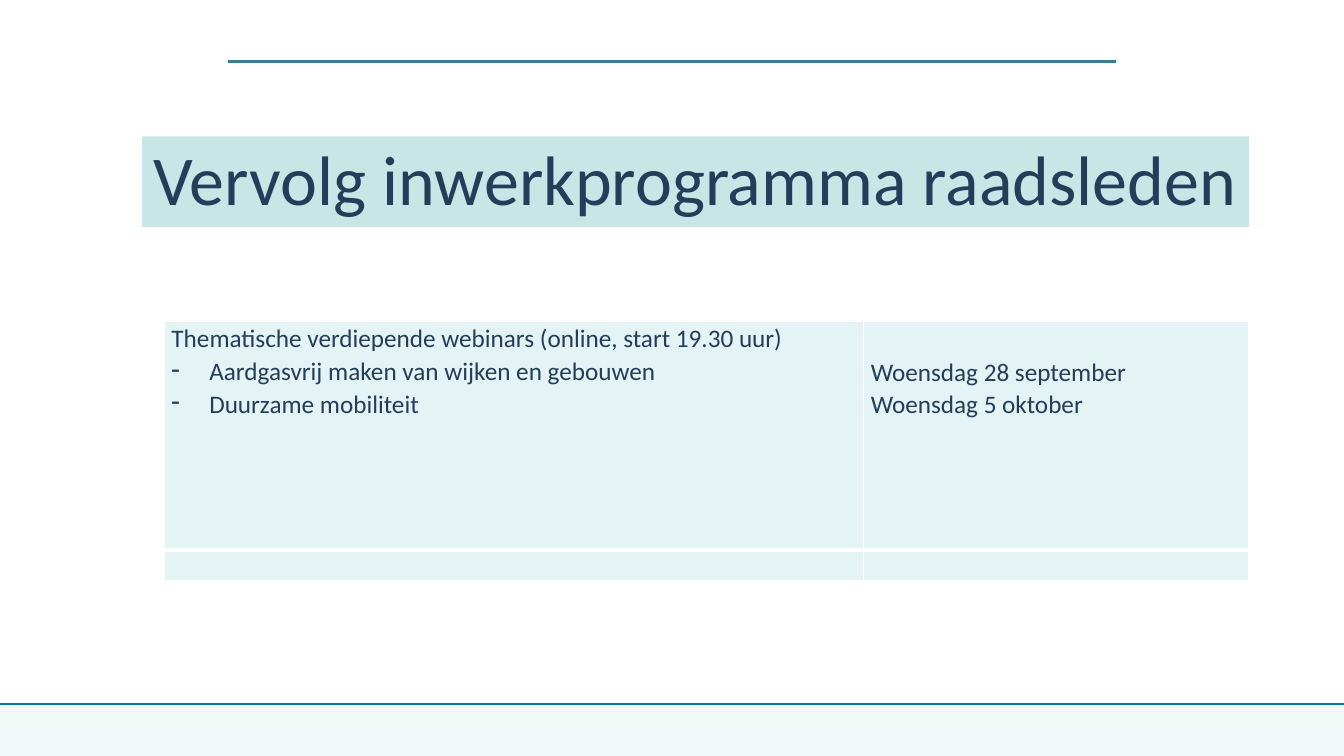
from lxml.etree import SubElement as Sub
from pptx import Presentation
from pptx.dml.color import RGBColor as Rgb
from pptx.enum.shapes import MSO_CONNECTOR as Conn, MSO_SHAPE as Kind
from pptx.enum.text import MSO_ANCHOR as Anchor, MSO_AUTO_SIZE as Fit, PP_ALIGN as Align
from pptx.oxml.ns import qn
from pptx.util import Pt

WIDE, HIGH = 960, 540
NAVY, MINT, PALE, WHITE = "233D5A", "C8E6E5", "E4F3F3", "FFFFFF"


def paint(target, tone):
    target.solid()
    target.fore_color.rgb = Rgb.from_string(tone)


def apply(item, **values):
    for name, value in values.items():
        setattr(item, name, value)


class Board:
    face = "Calibri"

    def __init__(self, slide):
        self.slide = slide
        self.shapes = slide.shapes

    def label(self, para, text, size):
        run = para.add_run()
        run.text = text
        apply(run.font, name=self.face, size=Pt(size), bold=False)
        paint(run.font.fill, NAVY)

    def title(self, text, box, size):
        head = self.shapes.title
        apply(head, **dict(zip(("left", "top", "width", "height"), map(Pt, box))))
        paint(head.fill, MINT)
        frame = head.text_frame
        apply(frame, auto_size=Fit.NONE, word_wrap=True, vertical_anchor=Anchor.MIDDLE,
              margin_left=0, margin_right=0, margin_top=Pt(2), margin_bottom=0)
        para = frame.paragraphs[0]
        apply(para, alignment=Align.CENTER, line_spacing=0.9)
        self.label(para, text, size)

    def band(self, box, tone, alpha):
        shape = self.shapes.add_shape(Kind.RECTANGLE, *map(Pt, box))
        shape.shadow.inherit = False
        paint(shape.fill, tone)
        shape.line.fill.background()
        color = shape._element.spPr.find(f"{qn('a:solidFill')}/{qn('a:srgbClr')}")
        Sub(color, qn("a:alpha"), val=str(alpha * 1000))

    def rule(self, start, end, y, tone, width):
        line = self.shapes.add_connector(Conn.STRAIGHT, Pt(start), Pt(y), Pt(end), Pt(y))
        line.line.width = Pt(width)
        paint(line.line.fill, tone)
        Sub(line._element.spPr, qn("a:effectLst"))

    def grid(self, left, top, cols, rows):
        frame = self.shapes.add_table(len(rows), len(cols), Pt(left), Pt(top),
                                      Pt(sum(cols)), Pt(sum(rows)))
        table = frame.table
        apply(table, first_row=False, horz_banding=False)
        for col, width in zip(table.columns, cols):
            col.width = Pt(width)
        for row, height in zip(table.rows, rows):
            row.height = Pt(height)
        return table

    def cell(self, cell, edges, lines, top=0):
        apply(cell, margin_left=Pt(5), margin_right=Pt(5),
              margin_top=Pt(top), margin_bottom=0)
        for side, width in zip("LRTB", edges):
            edge = Sub(cell._tc.get_or_add_tcPr(), qn(f"a:ln{side}"), w=str(Pt(width)))
            fill = Sub(edge, qn("a:solidFill"))
            Sub(fill, qn("a:srgbClr"), val=WHITE)
        paint(cell.fill, PALE)
        frame = cell.text_frame
        for i, (text, mark) in enumerate(lines):
            para = frame.add_paragraph() if i else frame.paragraphs[0]
            para.line_spacing = 1.07
            if mark:
                props = para._p.get_or_add_pPr()
                props.set("marL", str(Pt(27)))
                props.set("indent", str(Pt(-27)))
                Sub(props, qn("a:buChar"), char=mark)
            self.label(para, text, 18)


def main():
    deck = Presentation()
    apply(deck, slide_width=Pt(WIDE), slide_height=Pt(HIGH))
    board = Board(deck.slides.add_slide(deck.slide_layouts[5]))
    board.band((0, 503, WIDE, 37), PALE, 50)
    board.rule(WIDE, 0, 503, "007B9B", 1)
    board.rule(163, 797, 43.7, "387B9A", 2.25)
    board.title("Vervolg inwerkprogramma raadsleden", (101.3, 97.4, 791, 64.6), 50)

    topics = [("Thematische verdiepende webinars (online, start 19.30 uur)", ""),
              ("Aardgasvrij maken van wijken en gebouwen", "-"),
              ("Duurzame mobiliteit", "-")]
    dates = [("Woensdag 28 september", ""), ("Woensdag 5 oktober", "")]
    table = board.grid(117.5, 229.8, (499.5, 275), (163, 22))
    for col, (lines, top) in enumerate(((topics, 0), (dates, 23.7))):
        board.cell(table.cell(0, col), (1, 1, 1, 3), lines, top)
        board.cell(table.cell(1, col), (1, 1, 3, 1), [])
    deck.save("out.pptx")


if __name__ == "__main__":
    main()
